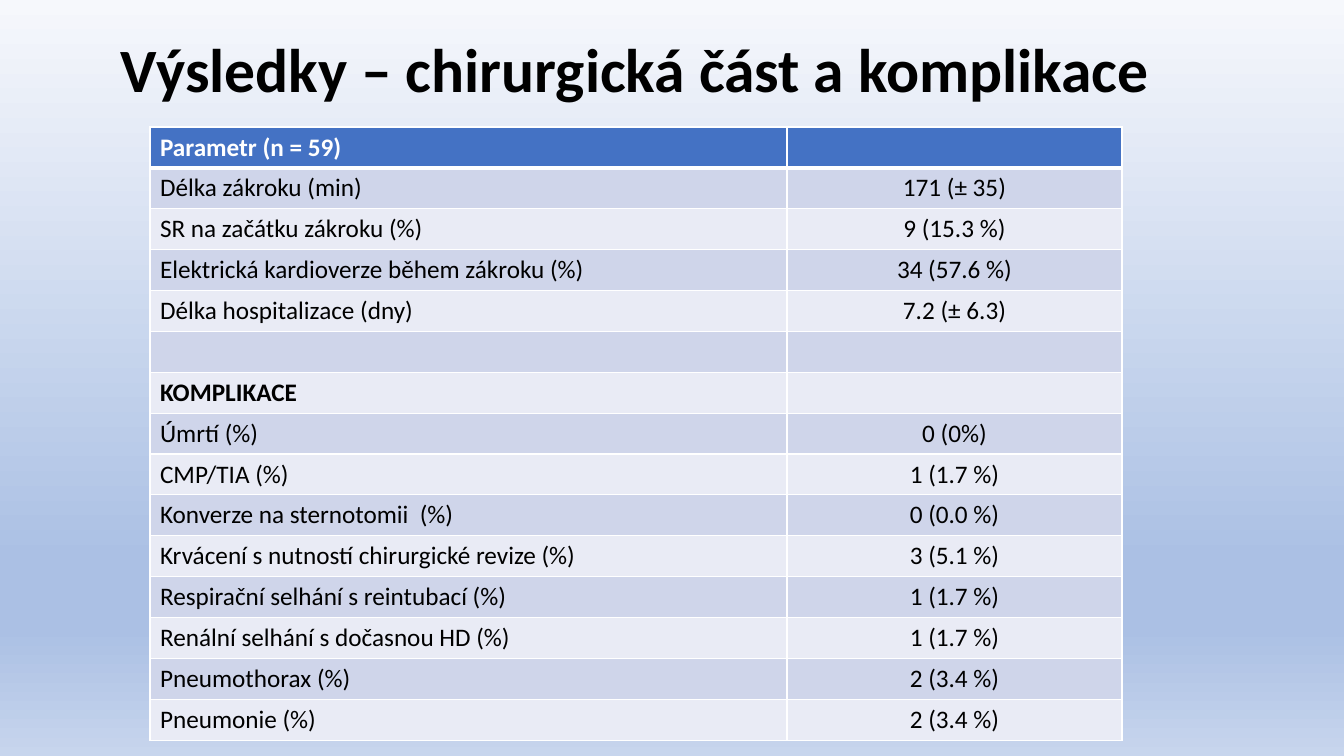
from lxml import etree
from pptx import Presentation
from pptx import util as u
from pptx.dml.color import RGBColor
from pptx.enum import text
from pptx.oxml.ns import qn

# Content
TITLE = "Výsledky – chirurgická část a komplikace"
ROWS = [
    ("Parametr (n = 59)", ""),
    ("Délka zákroku (min)", "171 (± 35)"),
    ("SR na začátku zákroku (%)", "9 (15.3 %)"),
    ("Elektrická kardioverze během zákroku (%)", "34 (57.6 %)"),
    ("Délka hospitalizace (dny)", "7.2 (± 6.3)"),
    ("", ""),
    ("KOMPLIKACE", ""),
    ("Úmrtí (%)", "0 (0%)"),
    ("CMP/TIA (%)", "1 (1.7 %)"),
    ("Konverze na sternotomii  (%)", "0 (0.0 %)"),
    ("Krvácení s nutností chirurgické revize (%)", "3 (5.1 %)"),
    ("Respirační selhání s reintubací (%)", "1 (1.7 %)"),
    ("Renální selhání s dočasnou HD (%)", "1 (1.7 %)"),
    ("Pneumothorax (%)", "2 (3.4 %)"),
    ("Pneumonie (%)", "2 (3.4 %)"),
]
BOLD_ROWS = {0, 6}
HEADER, BANDS = "4472C4", ("E9EBF5", "CFD5EA")
BACKGROUND = [(0, "F6F8FC"), (74, "ABC0E4"), (83, "ABC0E4"), (100, "C7D5ED")]

# Layout in px
SLIDE = (1344, 756)
TITLE_BOX = (56, 0, 1159, 146)
TABLE_BOX = (150, 127, 972, 613)
COLUMNS = (637, 335)


def px(n):
    return round(n * 914400 / 100.8)


def rgb(value):
    return RGBColor.from_string(value)


def style(p, size, color, bold):
    for r in p.runs:
        r.font.name = "Calibri"
        r.font.size = u.Pt(size)
        r.font.bold = bold
        r.font.color.rgb = rgb(color)


def add_color(parent, value):
    etree.SubElement(parent, qn("a:srgbClr"), val=value)


def add_borders(cell, bottom):
    tc_pr = cell._tc.get_or_add_tcPr()
    for side, width in (("L", 1), ("R", 1), ("T", 1), ("B", bottom)):
        ln = etree.SubElement(tc_pr, qn(f"a:ln{side}"), w=str(u.Pt(width)))
        add_color(etree.SubElement(ln, qn("a:solidFill")), "FFFFFF")


prs = Presentation()
prs.slide_width, prs.slide_height = map(px, SLIDE)
s = prs.slides.add_slide(prs.slide_layouts[5])

# Background gradient
fill = s.background.fill
fill.gradient()
fill.gradient_angle = 270
stops = s._element.find(".//" + qn("a:gsLst"))
for stop in list(stops):
    stops.remove(stop)
for position, color in BACKGROUND:
    add_color(etree.SubElement(stops, qn("a:gs"), pos=str(position * 1000)), color)

# Title
sp = s.shapes.title
sp.left, sp.top, sp.width, sp.height = map(px, TITLE_BOX)
tf = sp.text_frame
tf.text = TITLE
tf.vertical_anchor = text.MSO_ANCHOR.MIDDLE
p = tf.paragraphs[0]
p.alignment = text.PP_ALIGN.CENTER
p.line_spacing = 0.9
style(p, 44, "000000", True)

# Results table
table = s.shapes.add_table(len(ROWS), len(COLUMNS), *map(px, TABLE_BOX)).table
for column, width in zip(table.columns, COLUMNS):
    column.width = px(width)
for i, row in enumerate(ROWS):
    for j, value in enumerate(row):
        cell = table.cell(i, j)
        add_borders(cell, 1 if i else 3)
        cell.fill.solid()
        cell.fill.fore_color.rgb = rgb(BANDS[i % 2] if i else HEADER)
        cell.text_frame.text = value
        p = cell.text_frame.paragraphs[0]
        if j:
            p.alignment = text.PP_ALIGN.CENTER
        style(p, 18, "000000" if i else "FFFFFF", i in BOLD_ROWS)

prs.save("out.pptx")
